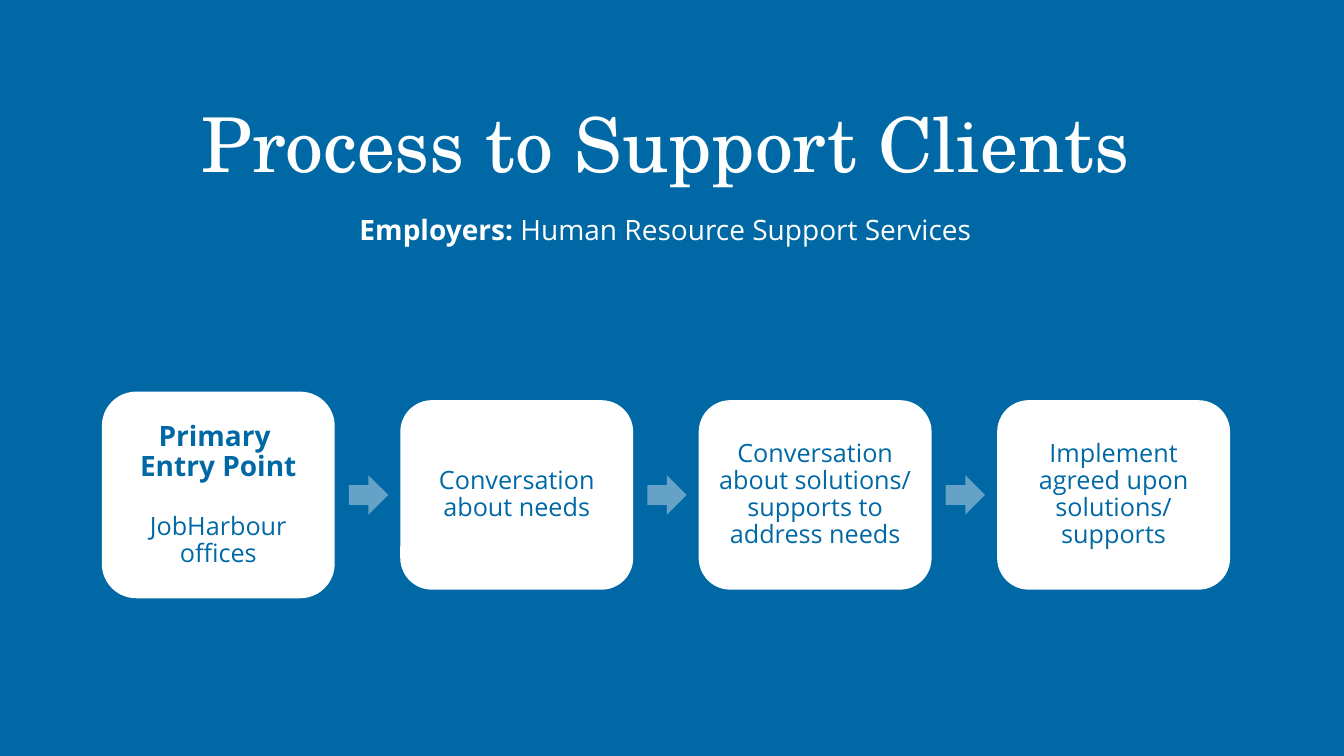
import pptx
import pptx.util
import pptx.dml.color
import pptx.enum.shapes
import pptx.enum.text
from dataclasses import dataclass

Inches = pptx.util.Inches
Pt = pptx.util.Pt
Shape = pptx.enum.shapes.MSO_SHAPE
Anchor = pptx.enum.text.MSO_ANCHOR


@dataclass(frozen=True)
class Theme:
    background: str = "0069A5"
    light: str = "FFFFFF"
    step_text: str = "0168A6"
    arrow: str = "66A2C8"
    title_font: str = "TeX Gyre Schola"
    body_font: str = "Open Sans"
    title_size: int = 54
    lead_size: int = 20
    step_size: int = 18
    gap: int = 22


THEME = Theme()

TITLE = "Process to Support Clients"
SUBTITLE = [("Employers: ", True), ("Human Resource Support Services", False)]
# Each step holds its bold heading lines and its body text.
STEPS = [
    (["Primary ", "Entry Point"], "JobHarbour offices"),
    ([], "Conversation about needs"),
    ([], "Conversation about solutions/ supports to address needs"),
    ([], "Implement agreed upon solutions/ supports"),
]

FIRST_LEFT, PITCH, CENTRE_Y = 1.01, 2.96, 4.91
STEP_WIDTH, STEP_HEIGHT, ENTRY_HEIGHT = 2.31, 1.88, 2.05
ARROW_OFFSET, ARROW_SIZE = 2.45, 0.39


def color(value):
    return pptx.dml.color.RGBColor.from_string(value)


def add_span(para, text, size, shade, bold=False, font=THEME.body_font):
    span = para.add_run()
    span.text = text
    span.font.name = font
    span.font.size = Pt(size)
    span.font.bold = bold
    span.font.color.rgb = color(shade)


def place(box, left, top, width, height):
    box.left, box.top = Inches(left), Inches(top)
    box.width, box.height = Inches(width), Inches(height)


def prepare(frame, anchor):
    """Set wrapping, fixed size and anchor; return the centred first paragraph."""
    frame.word_wrap = True
    frame.auto_size = pptx.enum.text.MSO_AUTO_SIZE.NONE
    frame.vertical_anchor = anchor
    return centre(frame.paragraphs[0])


def centre(para, spacing=1.0):
    para.alignment = pptx.enum.text.PP_ALIGN.CENTER
    para.line_spacing = spacing
    return para


def add_filled(page, kind, left, width, height, fill):
    shape = page.shapes.add_shape(
        kind, Inches(left), Inches(CENTRE_Y - height / 2), Inches(width), Inches(height))
    shape.shadow.inherit = False
    shape.fill.solid()
    shape.fill.fore_color.rgb = color(fill)
    shape.line.fill.background()
    return shape


def add_step(page, left, headings, body):
    height = ENTRY_HEIGHT if headings else STEP_HEIGHT
    box = add_filled(page, Shape.ROUNDED_RECTANGLE, left, STEP_WIDTH, height, THEME.light)
    frame = box.text_frame
    frame.margin_left = frame.margin_right = Inches(0.07)
    para = prepare(frame, Anchor.MIDDLE)
    for heading in headings:
        centre(para, 0.9)
        add_span(para, heading, THEME.lead_size, THEME.step_text, bold=True)
        para = frame.add_paragraph()
    centre(para, 0.9)
    if headings:
        para.space_before = Pt(THEME.gap)
    add_span(para, body, THEME.step_size, THEME.step_text)


def main():
    deck = pptx.Presentation()
    deck.slide_width, deck.slide_height = Inches(13.33), Inches(7.5)
    page = deck.slides.add_slide(deck.slide_layouts[5])
    page.background.fill.solid()
    page.background.fill.fore_color.rgb = color(THEME.background)

    title = page.shapes.title
    place(title, 1.46, 0.91, 10.28, 1.01)
    para = prepare(title.text_frame, Anchor.TOP)
    add_span(para, TITLE, THEME.title_size, THEME.light, font=THEME.title_font)

    subtitle = page.shapes.add_textbox(
        Inches(2.5), Inches(2.06), Inches(8.2), Inches(0.77))
    para = prepare(subtitle.text_frame, Anchor.TOP)
    for text, bold in SUBTITLE:
        add_span(para, text, THEME.lead_size, THEME.light, bold)

    for index, (headings, body) in enumerate(STEPS):
        left = FIRST_LEFT + index * PITCH
        add_step(page, left, headings, body)
        if index < len(STEPS) - 1:
            add_filled(page, Shape.RIGHT_ARROW, left + ARROW_OFFSET,
                       ARROW_SIZE, ARROW_SIZE, THEME.arrow)

    deck.save("out.pptx")


if __name__ == "__main__":
    main()
